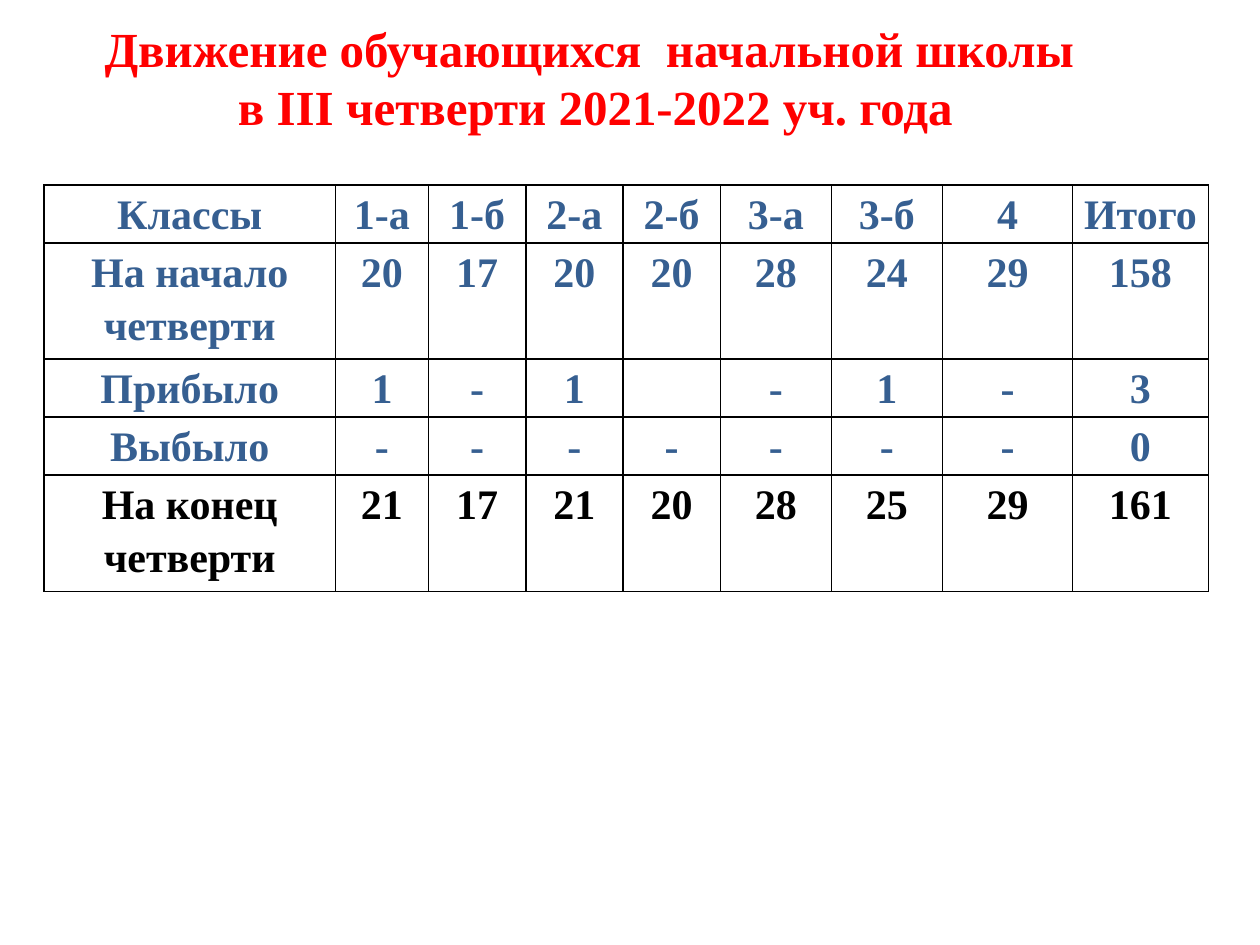
from typing import NamedTuple

from lxml import etree
from pptx import Presentation
from pptx.dml.color import RGBColor
from pptx.enum.text import MSO_ANCHOR, MSO_AUTO_SIZE, PP_ALIGN
from pptx.oxml.ns import qn
from pptx.util import Cm, Pt

MIDDLE = MSO_ANCHOR.MIDDLE
GROW = MSO_AUTO_SIZE.SHAPE_TO_FIT_TEXT
CENTER = PP_ALIGN.CENTER

RED = RGBColor(0xFF, 0x00, 0x00)
BLUE = RGBColor(0x36, 0x5F, 0x91)
BLACK = RGBColor(0x00, 0x00, 0x00)
FONT = "Times New Roman"
LINE = Cm(1.17)  # height of a table row with one line of text


class Row(NamedTuple):
    label: str
    values: list[str]
    lines: int = 1
    color: RGBColor = BLUE


TITLE = ["Движение обучающихся  начальной школы ",
         "в III четверти 2021-2022 уч. года"]
WIDTHS = [5.87, 1.88, 1.96, 1.96, 1.96, 2.24, 2.24, 2.62, 2.74]
ROWS = [
    Row("Классы", ["1-а", "1-б", "2-а", "2-б", "3-а", "3-б", "4", "Итого"]),
    Row("На начало четверти",
        ["20", "17", "20", "20", "28", "24", "29", "158"], 2),
    Row("Прибыло", ["1", "-", "1", "", "-", "1", "-", "3"]),
    Row("Выбыло", ["-", "-", "-", "-", "-", "-", "-", "0"]),
    Row("На конец четверти",
        ["21", "17", "21", "20", "28", "25", "29", "161"], 2, BLACK),
]


def style(para, size: int, color: RGBColor) -> None:
    para.alignment = CENTER
    font = para.font
    font.name = FONT
    font.size = Pt(size)
    font.bold = True
    font.color.rgb = color


def add_title(slide) -> None:
    title = slide.shapes.title
    title.left, title.top = Cm(1.75), Cm(0.23)
    title.width, title.height = Cm(20.5), Cm(2.64)
    frame = title.text_frame
    frame.text = "\n".join(TITLE)
    frame.word_wrap = False
    frame.auto_size = GROW
    frame.vertical_anchor = MIDDLE
    for para in frame.paragraphs:
        style(para, 28, RED)


def add_border(cell) -> None:
    props = cell._tc.get_or_add_tcPr()
    for spot, side in enumerate(("lnL", "lnR", "lnT", "lnB")):
        line = etree.Element(qn(f"a:{side}"), w=str(Pt(1)))
        fill = etree.SubElement(line, qn("a:solidFill"))
        etree.SubElement(fill, qn("a:srgbClr"), val=str(BLACK))
        props.insert(spot, line)


def fill_cell(cell, text: str, color: RGBColor) -> None:
    cell.text = text
    cell.margin_left = cell.margin_right = Cm(0.18)
    cell.margin_top = cell.margin_bottom = 0
    cell.fill.background()
    para = cell.text_frame.paragraphs[0]
    para.line_spacing = 1.15
    style(para, 24, color)
    add_border(cell)


def add_grid(slide, rows: list[Row]) -> None:
    height = LINE * sum(row.lines for row in rows)
    table = slide.shapes.add_table(
        len(rows), len(WIDTHS), Cm(0.89), Cm(3.73),
        Cm(sum(WIDTHS)), height).table
    table.first_row = table.horz_banding = False
    for col, width in zip(table.columns, WIDTHS):
        col.width = Cm(width)
    for line, row in zip(table.rows, rows):
        line.height = LINE * row.lines
        for cell, text in zip(line.cells, [row.label, *row.values]):
            fill_cell(cell, text, row.color)


def main() -> None:
    deck = Presentation()
    deck.slide_width, deck.slide_height = Cm(25.4), Cm(19.05)
    slide = deck.slides.add_slide(deck.slide_layouts[5])  # title only
    add_title(slide)
    add_grid(slide, ROWS)
    deck.save("out.pptx")


if __name__ == "__main__":
    main()
